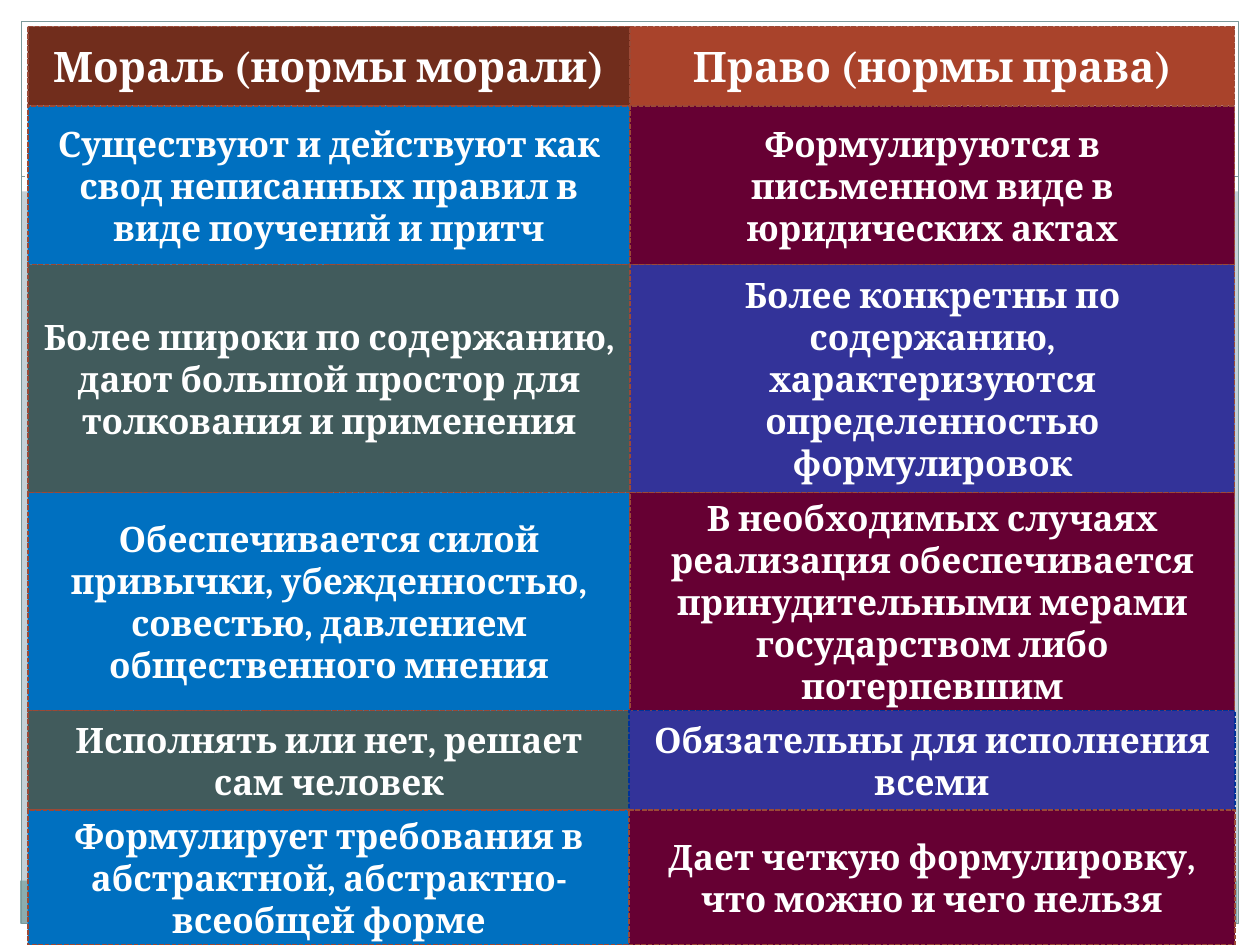
from dataclasses import dataclass

from lxml import etree
from pptx import Presentation
from pptx import util as u
from pptx.dml.color import RGBColor
from pptx.enum import dml, shapes, text
from pptx.oxml.ns import qn

EMU_PER_PX = 9144  # 100 px to the inch
WIDTH, HEIGHT = 1000, 750


@dataclass(frozen=True)
class Theme:
    font: str = "Cambria"
    heading_size: int = 24
    body_size: int = 20
    background: str = "C5D1D7"
    white: str = "FFFFFF"
    frame: str = "7C999A"
    footer: str = "8CADAE"
    cell_border: str = "9B4936"
    duty_border: str = "003399"
    moral_heading: str = "712D1C"
    law_heading: str = "A9432B"
    blue: str = "0070C0"
    teal: str = "415B5C"
    wine: str = "660033"
    indigo: str = "333399"


THEME = Theme()

MARGINS = [
    (0, 733, WIDTH, 17),
    (0, 0, WIDTH, 152),
    (0, 0, 17, HEIGHT),
    (983, 0, 17, HEIGHT),
]

TABLE_LEFT, TABLE_RIGHT = 22, 980
HEADING = ("Мораль (нормы морали)", "Право (нормы права)")
ROW_EDGES = [21, 84, 210, 391, 564, 643, 750]
COLUMN_EDGES = [500, 500, 500, 500, 499, 499]
COMPARISONS = [
    ("Существуют и действуют как свод неписанных правил в виде поучений и притч",
     "Формулируются в письменном виде в юридических актах"),
    ("Более широки по содержанию, дают большой простор для толкования и применения",
     "Более конкретны по содержанию, характеризуются определенностью формулировок"),
    ("Обеспечивается силой привычки, убежденностью, совестью, давлением общественного мнения",
     "В необходимых случаях реализация обеспечивается принудительными мерами "
     "государством либо потерпевшим"),
    ("Исполнять или нет, решает сам человек",
     "Обязательны для исполнения всеми"),
    ("Формулирует требования в абстрактной, абстрактно-всеобщей форме",
     "Дает четкую формулировку, что можно и чего нельзя"),
]
DUTY_ROW = 4


def px(length):
    return u.Emu(length * EMU_PER_PX)


def rgb(color):
    return RGBColor.from_string(color)


def style_line(line, color, width, dashed=False):
    line.color.rgb = rgb(color)
    line.width = u.Pt(width)
    if dashed:
        line.dash_style = dml.MSO_LINE.SQUARE_DOT


def add_panel(slide, box, fill=None, line=None, width=0.75, dashed=False,
              kind=shapes.MSO_SHAPE.RECTANGLE):
    panel = slide.shapes.add_shape(kind, *map(px, box))
    panel.shadow.inherit = False
    if fill:
        panel.fill.solid()
        panel.fill.fore_color.rgb = rgb(fill)
    else:
        panel.fill.background()
    if line:
        style_line(panel.line, line, width, dashed)
    else:
        panel.line.fill.background()
    return panel


def add_divider(slide, left, right, y):
    divider = slide.shapes.add_connector(
        shapes.MSO_CONNECTOR.STRAIGHT, px(left), px(y), px(right), px(y))
    style_line(divider.line, THEME.frame, 0.75, dashed=True)
    etree.SubElement(divider.element.spPr, qn("a:effectLst"))


def write(panel, wording, size=THEME.body_size, color=THEME.white, bold=True):
    frame = panel.text_frame
    frame.word_wrap = True
    frame.vertical_anchor = text.MSO_ANCHOR.MIDDLE
    paragraph = frame.paragraphs[0]
    paragraph.alignment = text.PP_ALIGN.CENTER
    run = paragraph.add_run()
    run.text = wording
    run.font.name = THEME.font
    run.font.size = u.Pt(size)
    run.font.bold = bold
    run.font.color.rgb = rgb(color)


def add_backdrop(slide):
    slide.background.fill.solid()
    slide.background.fill.fore_color.rgb = rgb(THEME.background)
    for margin in MARGINS:
        add_panel(slide, margin, fill=THEME.white)
    add_panel(slide, (16, 699, 966, 34), fill=THEME.footer)
    add_panel(slide, (17, 17, 966, 716), line=THEME.frame)
    add_divider(slide, 17, 983, 140)
    oval = shapes.MSO_SHAPE.OVAL
    add_panel(slide, (467, 105, 67, 67), fill=THEME.white, kind=oval)
    add_panel(slide, (477, 115, 46, 46), fill=THEME.white, line=THEME.frame,
              width=4, kind=oval)


def row_fills(row):
    """Heading colours first, then two alternating pairs."""
    if row == 0:
        return THEME.moral_heading, THEME.law_heading
    return (THEME.blue, THEME.wine) if row % 2 else (THEME.teal, THEME.indigo)


def add_comparison(slide):
    for row, wordings in enumerate([HEADING, *COMPARISONS]):
        top, bottom = ROW_EDGES[row:row + 2]
        middle = COLUMN_EDGES[row]
        spans = ((TABLE_LEFT, 500), (middle, TABLE_RIGHT))
        size = THEME.body_size if row else THEME.heading_size
        law_border = THEME.duty_border if row == DUTY_ROW else THEME.cell_border
        borders = (THEME.cell_border, law_border)
        for (left, right), wording, fill, border in zip(
                spans, wordings, row_fills(row), borders):
            cell = add_panel(slide, (left, top, right - left, bottom - top),
                             fill=fill, line=border, width=0.9, dashed=True)
            write(cell, wording, size=size)


def main():
    deck = Presentation()
    deck.slide_width, deck.slide_height = px(WIDTH), px(HEIGHT)
    slide = deck.slides.add_slide(deck.slide_layouts[6])
    add_backdrop(slide)
    add_comparison(slide)
    deck.save("out.pptx")


if __name__ == "__main__":
    main()
